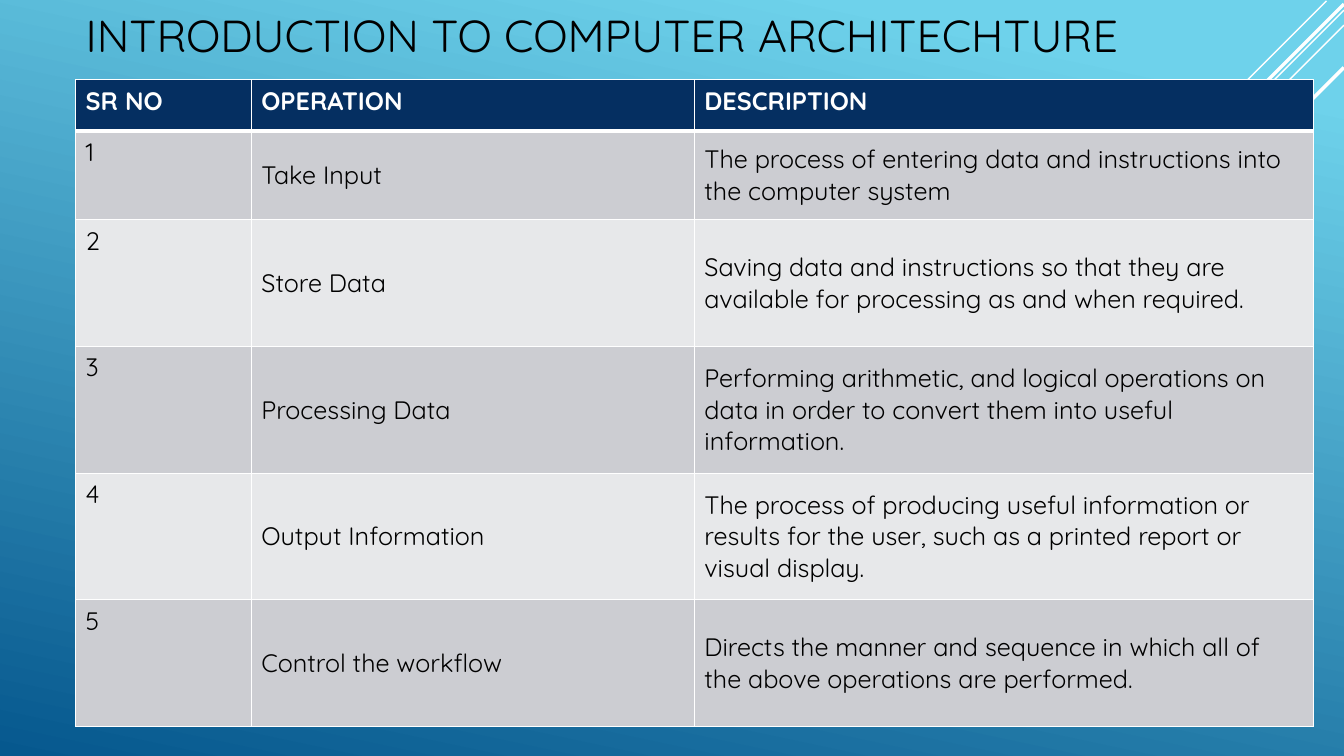
from dataclasses import dataclass

from lxml.etree import SubElement
from pptx import Presentation
from pptx.dml.color import RGBColor
from pptx.enum.shapes import MSO_CONNECTOR
from pptx.enum.text import MSO_ANCHOR, MSO_AUTO_SIZE, PP_ALIGN
from pptx.oxml import parse_xml
from pptx.oxml.ns import nsdecls, qn
from pptx.util import Pt


@dataclass(frozen=True)
class Theme:
    font: str = "Quicksand"
    title_size: float = 32
    table_size: float = 18
    ink: str = "000000"
    white: str = "FFFFFF"
    header: str = "052F61"
    bands: tuple = ("CCCDD2", "E7E8EA")
    sky: tuple = ((0.1, "6ED2EB"), (1, "06588E"))
    sky_angle: float = 258
    thin: float = 1
    rule: float = 3


THEME = Theme()

TITLE = "INTRODUCTION TO COMPUTER ARCHITECHTURE"
HEADINGS = ("SR NO", "OPERATION", "DESCRIPTION")
OPERATIONS = (
    ("Take Input",
     "The process of entering data and instructions into the computer system"),
    ("Store Data",
     "Saving data and instructions so that they are available for processing "
     "as and when required."),
    ("Processing Data",
     "Performing arithmetic, and logical operations on data in order to "
     "convert them into useful information."),
    ("Output Information",
     "The process of producing useful information or results for the user, "
     "such as a printed report or visual display."),
    ("Control the workflow",
     "Directs the manner and sequence in which all of the above operations "
     "are performed."),
)
COLUMN_WIDTHS = (125.5, 316.5, 442)
ROW_HEIGHTS = (36.5, 63.5, 90.5, 90.5, 90.5, 90.5)

# Start (from the right edge, from the top), diagonal run and weight
RAYS = (
    (12.5, 0.7, 300, 1),
    (0, 7.2, 479, 1),
    (0, 18, 390, 1),
    (0, 2.9, 382, 2.5),
    (0, 48.2, 342, 2.5),
)


def apply_format(target, values):
    for name, value in values.items():
        setattr(target, name, value)


def write(frame, text, size, color, bold=False):
    frame.text = text
    paragraph = frame.paragraphs[0]
    paragraph.alignment = PP_ALIGN.LEFT
    font = paragraph.runs[0].font
    apply_format(font, {"name": THEME.font, "size": Pt(size), "bold": bold})
    font.color.rgb = RGBColor.from_string(color)


def paint_background(slide):
    fill = slide.background.fill
    fill.gradient()
    fill.gradient_angle = THEME.sky_angle
    for stop, (position, color) in zip(fill.gradient_stops, THEME.sky):
        stop.position = position
        stop.color.rgb = RGBColor.from_string(color)


def add_rays(slide, right, top):
    """Draw the 45-degree rays falling leftwards from the top right corner."""
    for inset, drop, run, weight in RAYS:
        x, y = right - inset, top + drop
        ray = slide.shapes.add_connector(
            MSO_CONNECTOR.STRAIGHT, Pt(x), Pt(y), Pt(x - run), Pt(y + run))
        ray.line.color.rgb = RGBColor.from_string(THEME.white)
        ray.line.width = Pt(weight)
        SubElement(ray._element.spPr, qn("a:effectLst"))


def place_title(slide, left, top, width, height):
    title = slide.shapes.title
    apply_format(title, {"left": Pt(left), "top": Pt(top),
                         "width": Pt(width), "height": Pt(height)})
    frame = title.text_frame
    apply_format(frame, {"word_wrap": True, "auto_size": MSO_AUTO_SIZE.NONE,
                         "vertical_anchor": MSO_ANCHOR.BOTTOM})
    write(frame, TITLE, THEME.title_size, THEME.ink)


def set_borders(cell, top, bottom):
    weights = {"L": THEME.thin, "R": THEME.thin, "T": top, "B": bottom}
    properties = cell._tc.get_or_add_tcPr()
    for index, (side, weight) in enumerate(weights.items()):
        properties.insert(index, parse_xml(
            f'<a:ln{side} {nsdecls("a")} w="{Pt(weight)}"><a:solidFill>'
            f'<a:srgbClr val="{THEME.white}"/></a:solidFill></a:ln{side}>'))


def add_operations_table(slide, left, top):
    rows = [HEADINGS] + [(str(number), *operation)
                         for number, operation in enumerate(OPERATIONS, 1)]
    table = slide.shapes.add_table(
        len(rows), len(HEADINGS), Pt(left), Pt(top),
        Pt(sum(COLUMN_WIDTHS)), Pt(sum(ROW_HEIGHTS))).table
    for column, width in zip(table.columns, COLUMN_WIDTHS):
        column.width = Pt(width)
    for r, (row, height) in enumerate(zip(rows, ROW_HEIGHTS)):
        table.rows[r].height = Pt(height)
        heading = r == 0
        background = THEME.header if heading else THEME.bands[(r - 1) % 2]
        for c, text in enumerate(row):
            cell = table.cell(r, c)
            write(cell.text_frame, text, THEME.table_size,
                  THEME.white if heading else THEME.ink, heading)
            cell.vertical_anchor = (MSO_ANCHOR.TOP if heading or c == 0
                                    else MSO_ANCHOR.MIDDLE)
            cell.fill.solid()
            cell.fill.fore_color.rgb = RGBColor.from_string(background)
            set_borders(cell, THEME.rule if r == 1 else THEME.thin,
                        THEME.rule if heading else THEME.thin)


def main():
    deck = Presentation()
    apply_format(deck, {"slide_width": Pt(960), "slide_height": Pt(540)})
    slide = deck.slides.add_slide(deck.slide_layouts[5])
    paint_background(slide)
    add_rays(slide, 960, 0)
    place_title(slide, 54, 8, sum(COLUMN_WIDTHS), 39.5)
    add_operations_table(slide, 54, 57)
    deck.save("out.pptx")


if __name__ == "__main__":
    main()
